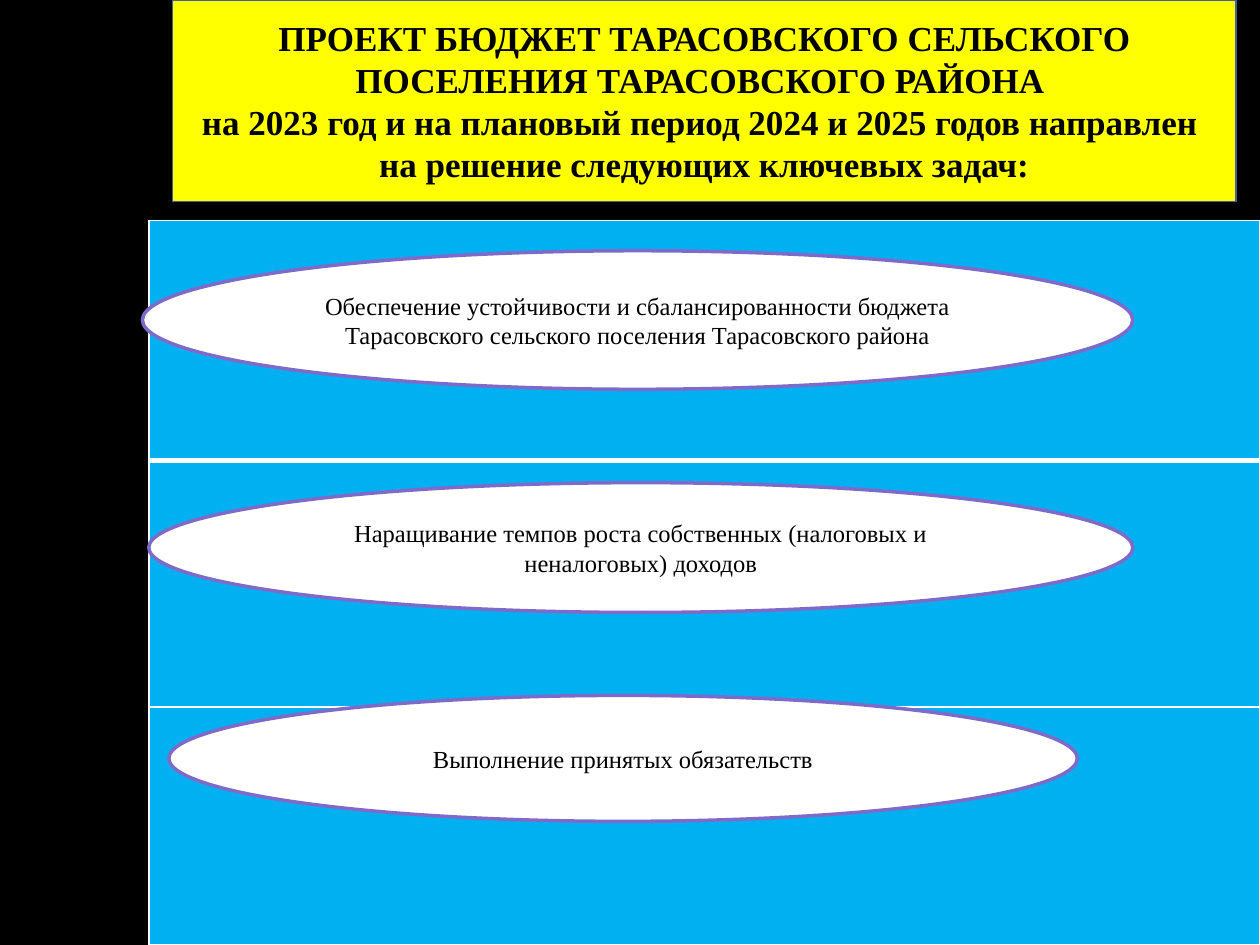
"""Build the slide of key budget tasks of the Tarasovskoye rural settlement."""
from lxml.etree import SubElement
from pptx import Presentation
from pptx.dml.color import RGBColor
from pptx.enum.shapes import MSO_SHAPE
from pptx.enum.text import MSO_ANCHOR, PP_ALIGN
from pptx.oxml.ns import qn
from pptx.util import Pt

TITLE = (
    "ПРОЕКТ БЮДЖЕТ ТАРАСОВСКОГО СЕЛЬСКОГО ПОСЕЛЕНИЯ ТАРАСОВСКОГО РАЙОНА \v"
    "на 2023 год и на плановый период 2024 и 2025 годов направлен \v"
    "на решение следующих ключевых задач:"
)
TITLE_BOX = (98.64, 0, 607.68, 115.2)
TASKS = [
    ("Обеспечение устойчивости и сбалансированности бюджета "
     "Тарасовского сельского поселения Тарасовского района",
     (81.4, 143.3, 565.9, 79.2)),
    ("Наращивание темпов роста собственных (налоговых и неналоговых) доходов",
     (85, 275.8, 562.3, 74.2)),
    ("Выполнение принятых обязательств", (96.5, 397.4, 519.1, 72)),
]
TABLE_BOX = (85, 126, 635, 414)
ROW_HEIGHTS = [137, 141, 136]
THICK_EDGE = (0, "lnB")

THEME = {
    "font": "Times New Roman", "text": "000000", "background": "000000",
    "title_fill": "FFFF00", "title_line": "465F9A", "title_size": 20, "title_width": 0.75,
    "task_fill": "FFFFFF", "task_line": "7E6BC9", "task_size": 14, "task_width": 2,
    "band": "00B0F0", "border": "FFFFFF", "border_width": 1, "thick_width": 3,
}


def color(name):
    """Return a theme colour."""
    return RGBColor.from_string(THEME[name])


def paint(target, name):
    """Give the target a solid theme fill."""
    target.fill.solid()
    target.fill.fore_color.rgb = color(name)


def add_label(slide, kind, box, text, role, bold):
    """Add a filled, outlined shape with centred text."""
    shape = slide.shapes.add_shape(kind, *map(Pt, box))
    shape.shadow.inherit = False
    paint(shape, f"{role}_fill")
    shape.line.color.rgb = color(f"{role}_line")
    shape.line.width = Pt(THEME[f"{role}_width"])
    shape.text_frame.word_wrap = True
    shape.text_frame.vertical_anchor = MSO_ANCHOR.MIDDLE
    paragraph = shape.text_frame.paragraphs[0]
    paragraph.text = text
    paragraph.alignment = PP_ALIGN.CENTER
    font_format = {"name": THEME["font"], "size": Pt(THEME[f"{role}_size"]), "bold": bold}
    for run in paragraph.runs:
        for attribute, value in font_format.items():
            setattr(run.font, attribute, value)
        run.font.color.rgb = color("text")


def add_border(properties, position, edge, width):
    """Add one solid border ahead of the cell fill."""
    line = SubElement(properties, qn(f"a:{edge}"), w=str(Pt(width)))
    fill = SubElement(line, qn("a:solidFill"))
    SubElement(fill, qn("a:srgbClr"), val=THEME["border"])
    properties.insert(position, line)


def add_bands(slide):
    """Add the one-column table behind the tasks."""
    frame = slide.shapes.add_table(len(ROW_HEIGHTS), 1, *map(Pt, TABLE_BOX))
    table = frame.table
    for index, height in enumerate(ROW_HEIGHTS):
        table.rows[index].height = Pt(height)
        cell = table.cell(index, 0)
        paint(cell, "band")
        properties = cell._tc.get_or_add_tcPr()
        for position, edge in enumerate(("lnL", "lnR", "lnT", "lnB")):
            thick = (index, edge) == THICK_EDGE or (index - 1, edge) == (THICK_EDGE[0], "lnT")
            add_border(properties, position, edge, THEME["thick_width" if thick else "border_width"])


def main():
    """Build and save the presentation."""
    presentation = Presentation()
    presentation.slide_width, presentation.slide_height = Pt(720), Pt(540)
    slide = presentation.slides.add_slide(presentation.slide_layouts[6])
    paint(slide.background, "background")
    add_label(slide, MSO_SHAPE.RECTANGLE, TITLE_BOX, TITLE, "title", True)
    add_bands(slide)
    for text, box in TASKS:
        add_label(slide, MSO_SHAPE.OVAL, box, text, "task", False)
    presentation.save("out.pptx")


if __name__ == "__main__":
    main()
